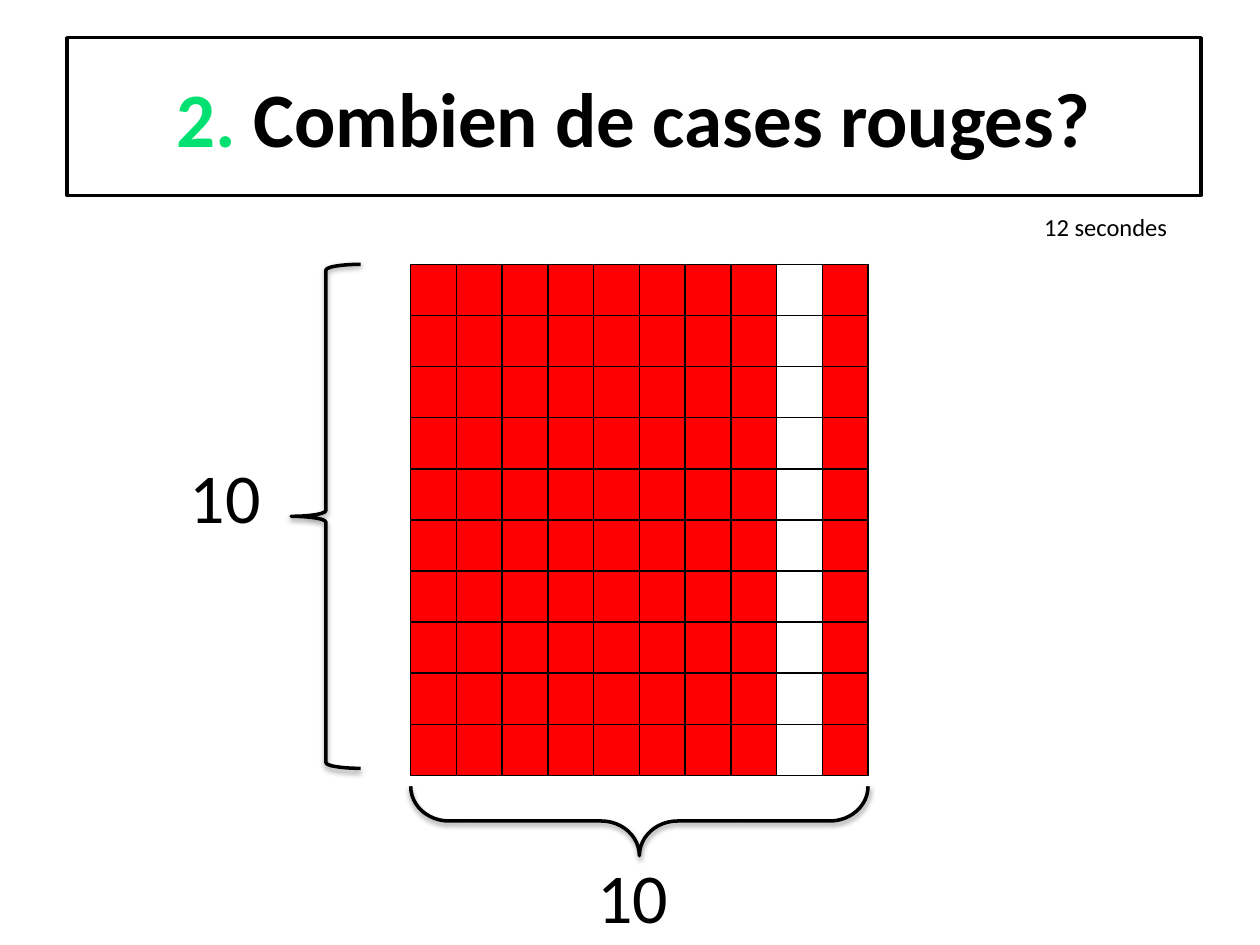
from lxml import etree
from pptx import Presentation
from pptx.dml.color import RGBColor
from pptx.enum.shapes import MSO_SHAPE
from pptx.enum.text import MSO_ANCHOR, PP_ALIGN
from pptx.oxml import parse_xml
from pptx.oxml.ns import nsdecls, qn
from pptx.util import Cm, Pt

BLACK, WHITE, RED, GREEN = "000000", "FFFFFF", "FF0000", "00E172"
SIDE = 10
BLANK = 8  # index of the white column


def color(code):
    return RGBColor.from_string(code)


def style(run, size, code=BLACK, bold=False):
    font = run.font
    font.name, font.size, font.bold = "Calibri", Pt(size), bold
    font.color.rgb = color(code)


def outline(shape):
    shape.line.color.rgb = color(BLACK)
    shape.line.width = Pt(2)
    shape.shadow.inherit = False


def label(slide, text, size, left, top, width, height, wrap=False):
    box = slide.shapes.add_textbox(Cm(left), Cm(top), Cm(width), Cm(height))
    frame = box.text_frame
    frame.text = text
    frame.word_wrap = wrap
    style(frame.paragraphs[0].runs[0], size)


def title(slide, left, top, width, height):
    box = slide.shapes.add_shape(
        MSO_SHAPE.RECTANGLE, Cm(left), Cm(top), Cm(width), Cm(height))
    box.fill.solid()
    box.fill.fore_color.rgb = color(WHITE)
    outline(box)
    frame = box.text_frame
    frame.word_wrap = True
    frame.vertical_anchor = MSO_ANCHOR.MIDDLE
    line = frame.paragraphs[0]
    line.alignment = PP_ALIGN.CENTER
    for text, code in (("2.", GREEN), (" Combien de cases rouges?", BLACK)):
        run = line.add_run()
        run.text = text
        style(run, 44, code, True)


def border(cell):
    # Borders must come before the fill in the cell properties
    props = cell._tc.get_or_add_tcPr()
    for spot, side in enumerate(("lnL", "lnR", "lnT", "lnB")):
        edge = parse_xml(
            f'<a:{side} {nsdecls("a")} w="12700"><a:solidFill>'
            f'<a:srgbClr val="{BLACK}"/></a:solidFill></a:{side}>')
        props.insert(spot, edge)


def grid(slide, left, top, width, height):
    table = slide.shapes.add_table(
        SIDE, SIDE, Cm(left), Cm(top), Cm(width), Cm(height)).table
    table.first_row = table.horz_banding = False
    for col in table.columns:
        col.width = Cm(width / SIDE)
    for row in table.rows:
        row.height = Cm(height / SIDE)
        for index, cell in enumerate(row.cells):
            cell.fill.solid()
            cell.fill.fore_color.rgb = color(WHITE if index == BLANK else RED)
            border(cell)


def brace(slide, left, top, width, height):
    shape = slide.shapes.add_shape(
        MSO_SHAPE.LEFT_BRACE, Cm(left), Cm(top), Cm(width), Cm(height))
    shape.fill.background()
    outline(shape)
    # Soft shadow below the line
    effects = shape._element.spPr.find(qn("a:effectLst"))
    shade = etree.SubElement(
        effects, qn("a:outerShdw"), blurRad=str(Pt(3.1)), dist=str(Pt(1.6)),
        dir="5400000", rotWithShape="0")
    tint = etree.SubElement(shade, qn("a:srgbClr"), val=BLACK)
    etree.SubElement(tint, qn("a:alpha"), val="38000")
    return shape


def figure(slide, left, top, width, height):
    grid(slide, left, top, width, height)
    thick = 1.4

    # Row count on the left
    brace(slide, left - 2.41, top, thick, 10.16)
    label(slide, str(SIDE), 40, left - 4.7, top + 3.69, 1.96, 1.96)

    # Column count below: an upright brace turned about its centre
    mid, low = left + width / 2, top + height + 0.92
    under = brace(slide, mid - thick / 2, low - width / 2, thick, width)
    under.rotation = 270
    under.adjustments[0] = 0.55
    label(slide, str(SIDE), 40, mid - 1.1, low + 0.54, 1.96, 1.96)


def main():
    deck = Presentation()
    deck.slide_width, deck.slide_height = Cm(25.4), Cm(19.05)
    slide = deck.slides.add_slide(deck.slide_layouts[6])
    title(slide, 1.35, 0.76, 22.86, 3.18)
    figure(slide, 8.28, 5.33, 9.22, 10.3)
    # Time allowed
    label(slide, "12 secondes", 14, 20.8, 4.14, 3.07, 0.86, wrap=True)
    deck.save("out.pptx")


if __name__ == "__main__":
    main()
